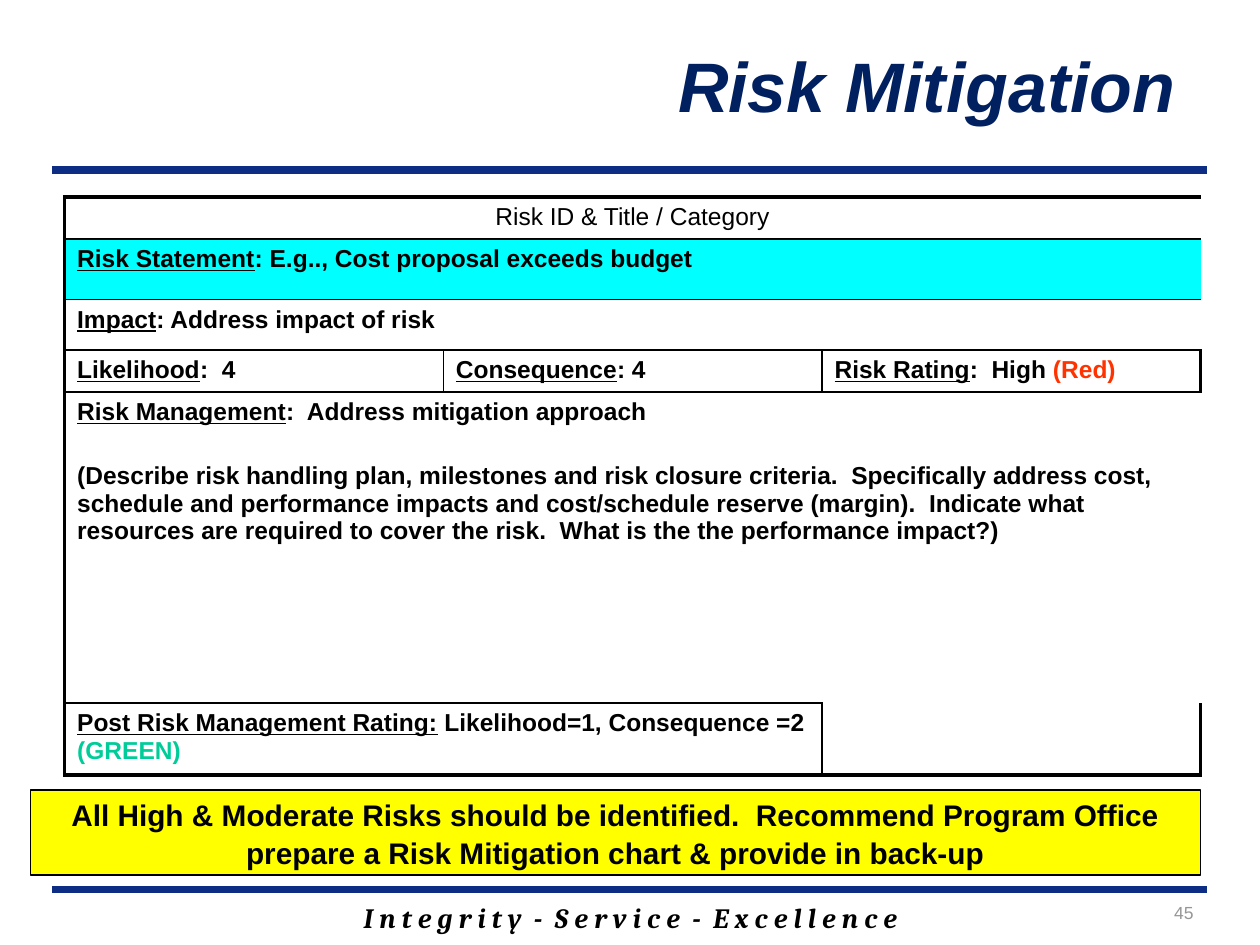
from pptx import Presentation
from pptx import util as u
from pptx.dml import color
from pptx.enum import shapes, text
from pptx.oxml import ns
from lxml import etree

Pt = u.Pt
C = {"black": "000000", "navy": "002060", "rule": "0C2D83", "cyan": "00FFFF",
     "yellow": "FFFF00", "red": "FF3300", "green": "00CC99", "gray": "969696"}
CENTER, RIGHT = text.PP_ALIGN.CENTER, text.PP_ALIGN.RIGHT


def add_text(p, txt, size=14, font="Arial", fill="black", bold=False,
             italic=False, underline=False, align=None):
    if align is not None:
        p.alignment = align
    r = p.add_run()
    r.text = txt
    f = r.font
    f.size, f.name, f.bold, f.italic = Pt(size), font, bold, italic
    f.underline = underline
    f.color.rgb = color.RGBColor.from_string(C[fill])


def add_border(cell, side, width):
    ln = etree.SubElement(cell._tc.get_or_add_tcPr(), ns.qn(f"a:ln{side}"))
    if not width:
        etree.SubElement(ln, ns.qn("a:noFill"))
        return
    ln.set("w", str(Pt(width)))
    fill = etree.SubElement(ln, ns.qn("a:solidFill"))
    etree.SubElement(fill, ns.qn("a:srgbClr"), val=C["black"])


prs = Presentation()
prs.slide_width, prs.slide_height = Pt(720), Pt(540)
s = prs.slides.add_slide(prs.slide_layouts[6])

for y in (508.3, 97.2):
    ln = s.shapes.add_connector(shapes.MSO_CONNECTOR.STRAIGHT, Pt(30), Pt(y), Pt(690), Pt(y))
    ln.line.width = Pt(4.5)
    ln.line.color.rgb = color.RGBColor.from_string(C["rule"])
    etree.SubElement(ln._element.spPr, ns.qn("a:effectLst"))

labels = [
    ((378.7, 20.9, 301.7, 55.4), False, "Risk Mitigation",
     dict(size=40, fill="navy", bold=True, italic=True, align=CENTER)),
    ((102.2, 511.2, 516.2, 26.6), True,
     "I n t e g r i t y  -  S e r v i c e  -  E x c e l l e n c e",
     dict(size=16, font="Cambria", bold=True, italic=True, align=CENTER)),
    ((593.3, 511.9, 95.8, 23.8), True, "45", dict(size=10, fill="gray", align=RIGHT)),
]
for box, wrap, txt, fmt in labels:
    tf = s.shapes.add_textbox(*map(Pt, box)).text_frame
    tf.word_wrap = wrap
    add_text(tf.paragraphs[0], txt, **fmt)

heights = [23.8, 34.6, 28.8, 23.8, 177.8, 41]
rows = [
    [(3, None, "Risk ID & Title / Category", None)],
    [(3, "Risk Statement", ": E.g.., Cost proposal exceeds budget", None)],
    [(3, "Impact", ": Address impact of risk", None)],
    [(1, "Likelihood", ":  4", None),
     (1, "Consequence", ": 4", None),
     (1, "Risk Rating", ":  High ", ("(Red)", "red"))],
    [(3, "Risk Management", ":  Address mitigation approach", None)],
    [(2, "Post Risk Management Rating:", " Likelihood=1, Consequence =2 ", ("(GREEN)", "green")),
     (1, None, None, None)],
]
tbl = s.shapes.add_table(6, 3, Pt(36.9), Pt(112.5), Pt(649.2), Pt(sum(heights))).table
tbl.first_row = tbl.horz_banding = False
for col in tbl.columns:
    col.width = Pt(216.4)

last = len(rows) - 1
for i, (row, height) in enumerate(zip(rows, heights)):
    tbl.rows[i].height = Pt(height)
    j = 0
    for span, label, body, rating in row:
        end = j + span - 1
        for k in range(j, end + 1):
            cell = tbl.cell(i, k)
            add_border(cell, "L", 2.25 if k == 0 else 1 if k == j else 0)
            add_border(cell, "R", 2.25 if k == 2 else 1 if k == end else 0)
            add_border(cell, "T", 2.25 if i == 0 else 0 if (i, k) == (last, 2) else 1)
            add_border(cell, "B", 2.25 if i == last else 0 if (i, k) == (last - 1, 2) else 1)
            if i == 1:
                cell.fill.solid()
                cell.fill.fore_color.rgb = color.RGBColor.from_string(C["cyan"])
            else:
                cell.fill.background()
        cell = tbl.cell(i, j)
        if span > 1:
            cell.merge(tbl.cell(i, end))
        p = cell.text_frame.paragraphs[0]
        if label:
            add_text(p, label, bold=True, underline=True)
        if body:
            add_text(p, body, bold=bool(label), align=None if label else CENTER)
        if rating:
            add_text(p, rating[0], bold=True, fill=rating[1])
        j = end + 1

p = tbl.cell(4, 0).text_frame.add_paragraph()
p.space_before = Pt(21)
add_text(p, "(Describe risk handling plan, milestones and risk closure criteria.  "
            "Specifically address cost, schedule and performance impacts and "
            "cost/schedule reserve (margin).  Indicate what resources are required "
            "to cover the risk.  What is the the performance impact?)", bold=True)

sp = s.shapes.add_shape(shapes.MSO_SHAPE.RECTANGLE, Pt(17.3), Pt(451.4), Pt(668.9), Pt(48.6))
sp.shadow.inherit = False
sp.fill.solid()
sp.fill.fore_color.rgb = color.RGBColor.from_string(C["yellow"])
sp.line.color.rgb = color.RGBColor.from_string(C["black"])
sp.line.width = Pt(0.75)
tf = sp.text_frame
tf.word_wrap = True
tf.vertical_anchor = text.MSO_ANCHOR.MIDDLE
p = tf.paragraphs[0]
p.line_spacing = 1.05
add_text(p, "All High & Moderate Risks should be identified.  Recommend Program Office "
            "prepare a Risk Mitigation chart & provide in back-up",
         size=17, bold=True, align=CENTER)

prs.save("out.pptx")
